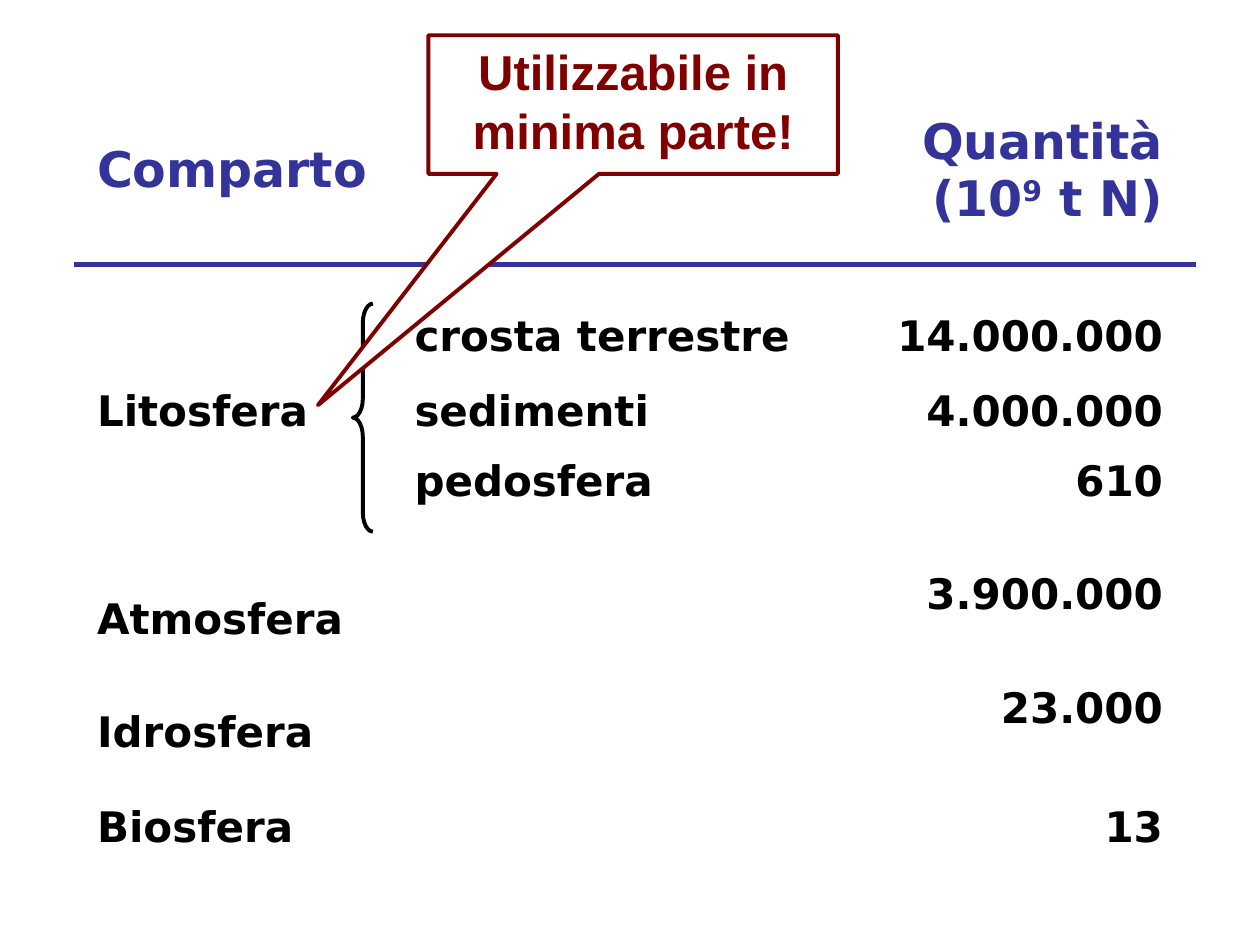
from pptx import Presentation
from pptx.dml.color import RGBColor
from pptx.enum.shapes import MSO_CONNECTOR, MSO_SHAPE
from pptx.enum.text import MSO_ANCHOR, PP_ALIGN
from pptx.oxml.ns import qn
from pptx.util import Inches, Pt
from lxml import etree

HEADER = [["Comparto"], [], ["Quantità", "(10^9^ t N)"]]
COMPARTMENTS = [
    ("", "", ""),
    ("", "crosta terrestre", "14.000.000"),
    ("Litosfera", "sedimenti", "4.000.000"),
    ("", "pedosfera", "610"),
    ("Atmosfera", "", "3.900.000"),
    ("Idrosfera", "", "23.000"),
    ("Biosfera", "", "13"),
]
RAISED = {("pedosfera"), "610", "3.900.000", "23.000"}
WARNING = "Utilizzabile in minima parte!"
COLUMN_WIDTHS = [2.52, 3.2, 2.94]
ROW_HEIGHTS = [1.03, 0.5, 0.6, 0.6, 0.9, 0.9, 0.9, 0.6]
ALIGNMENTS = [PP_ALIGN.LEFT, PP_ALIGN.LEFT, PP_ALIGN.RIGHT]
THEME = {
    "header": RGBColor(0x33, 0x33, 0x99),
    "body": RGBColor(0, 0, 0),
    "warning": RGBColor(0x80, 0, 0),
    "paper": RGBColor(255, 255, 255),
    "table_font": "DejaVu Sans",
    "warning_font": "Arial",
    "large": 28,
    "normal": 24,
}


def add_run(paragraph, text, size, color, font):
    run = paragraph.add_run()
    run.text = text
    run.font.size = Pt(size)
    run.font.bold = True
    run.font.name = font
    run.font.color.rgb = color
    return run


def fill_cell(cell, lines, align, size, color):
    cell.fill.background()
    cell.vertical_anchor = MSO_ANCHOR.MIDDLE
    for index, line in enumerate(lines):
        frame = cell.text_frame
        paragraph = frame.add_paragraph() if index else frame.paragraphs[0]
        paragraph.alignment = align
        for part, text in enumerate(line.split("^")):
            run = add_run(paragraph, text, size, color, THEME["table_font"])
            if part % 2:
                run.font._element.set("baseline", "30000")
        if line in RAISED:
            cell.vertical_anchor = MSO_ANCHOR.TOP
            cell.margin_top = Inches(0.06)


def add_outlined(slide, kind, box, adjustments, color):
    shape = slide.shapes.add_shape(kind, *map(Inches, box))
    shape.shadow.inherit = False
    shape.fill.background()
    shape.line.color.rgb = color
    shape.line.width = Pt(2.25)
    for index, value in enumerate(adjustments):
        shape.adjustments[index] = value
    return shape


def main():
    deck = Presentation()
    deck.slide_width, deck.slide_height = Inches(10), Inches(7.5)
    slide = deck.slides.add_slide(deck.slide_layouts[6])

    quantities = slide.shapes.add_table(
        len(ROW_HEIGHTS), len(COLUMN_WIDTHS), Inches(0.67), Inches(0.84),
        Inches(sum(COLUMN_WIDTHS)), Inches(sum(ROW_HEIGHTS))).table
    quantities.first_row = quantities.horz_banding = False
    for column, width in zip(quantities.columns, COLUMN_WIDTHS):
        column.width = Inches(width)
    for row, height in zip(quantities.rows, ROW_HEIGHTS):
        row.height = Inches(height)

    body = [[[text] if text else [] for text in row] for row in COMPARTMENTS]
    for r, row in enumerate([HEADER] + body):
        size, color = ((THEME["normal"], THEME["body"]) if r
                       else (THEME["large"], THEME["header"]))
        for c, lines in enumerate(row):
            fill_cell(quantities.cell(r, c), lines, ALIGNMENTS[c], size, color)

    header_rule = slide.shapes.add_connector(
        MSO_CONNECTOR.STRAIGHT, Inches(0.59), Inches(2.1), Inches(9.49), Inches(2.1))
    header_rule.line.color.rgb = THEME["header"]
    header_rule.line.width = Pt(3)
    etree.SubElement(header_rule._element.spPr, qn("a:effectLst"))

    add_outlined(slide, MSO_SHAPE.LEFT_BRACE, (2.8, 2.41, 0.16, 1.81),
                 (0.95, 0.5), THEME["body"])

    warning = add_outlined(slide, MSO_SHAPE.RECTANGULAR_CALLOUT, (3.4, 0.28, 3.25, 1.1),
                           (-0.77, 2.17), THEME["warning"])
    warning.fill.solid()
    warning.fill.fore_color.rgb = THEME["paper"]
    frame = warning.text_frame
    frame.word_wrap = True
    frame.vertical_anchor = MSO_ANCHOR.TOP
    frame.paragraphs[0].alignment = PP_ALIGN.CENTER
    add_run(frame.paragraphs[0], WARNING, THEME["large"], THEME["warning"],
            THEME["warning_font"])

    deck.save("out.pptx")


if __name__ == "__main__":
    main()
